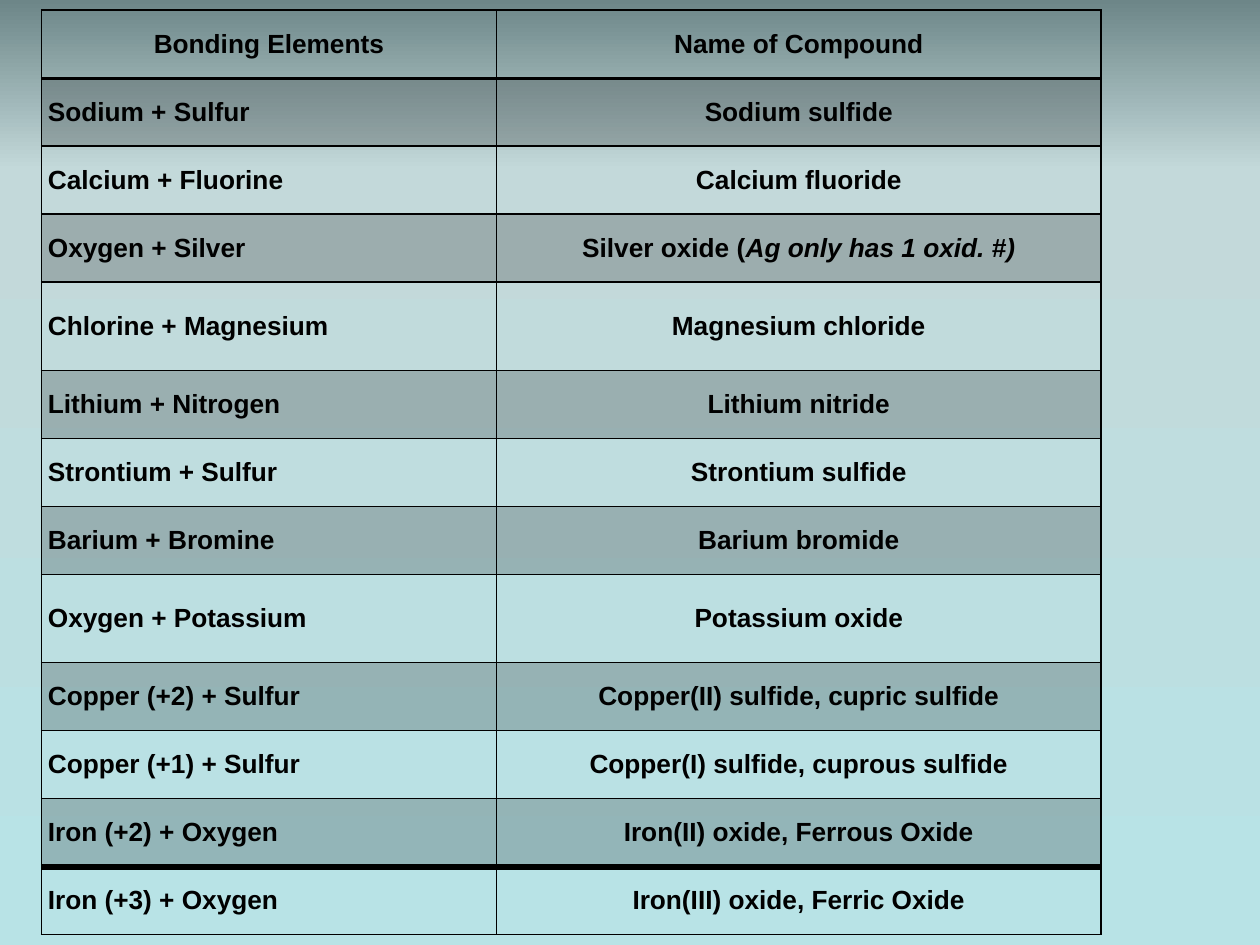
from copy import deepcopy
from dataclasses import dataclass

from pptx import Presentation
from pptx.dml.color import RGBColor as RGB
from pptx.enum.text import MSO_ANCHOR as Anchor, PP_ALIGN as Align
from pptx.oxml import parse_xml
from pptx.oxml.ns import nsdecls, qn
from pptx.util import Inches, Pt


@dataclass(frozen=True)
class Theme:
    font: str = "Arial"
    size: float = 15
    ink: str = "000000"
    shade: int = 20
    thin: float = 1
    head: float = 2
    heavy: float = 4
    back: tuple = ((0, "6D8688"), (0.18, "C3D9DA"), (1, "B8E3E6"))


ROWS = [
    ("Bonding Elements", "Name of Compound"),
    ("Sodium + Sulfur", "Sodium sulfide"),
    ("Calcium + Fluorine", "Calcium fluoride"),
    ("Oxygen + Silver", "Silver oxide (|Ag only has 1 oxid. #)"),
    ("Chlorine + Magnesium", "Magnesium chloride"),
    ("Lithium + Nitrogen", "Lithium nitride"),
    ("Strontium + Sulfur", "Strontium sulfide"),
    ("Barium + Bromine", "Barium bromide"),
    ("Oxygen + Potassium", "Potassium oxide"),
    ("Copper (+2) + Sulfur", "Copper(II) sulfide, cupric sulfide"),
    ("Copper (+1) + Sulfur", "Copper(I) sulfide, cuprous sulfide"),
    ("Iron (+2) + Oxygen", "Iron(II) oxide, Ferrous Oxide"),
    ("Iron (+3) + Oxygen", "Iron(III) oxide, Ferric Oxide"),
]
COLS = (3.61, 4.8)
TALL = {4, 8}


class Deck:
    def __init__(self, theme):
        self.theme = theme
        self.prs = Presentation()
        self.prs.slide_width, self.prs.slide_height = Inches(10), Inches(7.5)
        self.slide = self.prs.slides.add_slide(self.prs.slide_layouts[6])

    def backdrop(self):
        fill = self.slide.background.fill
        fill.gradient()
        fill.gradient_angle = 270
        stops = self.slide.element.find(".//" + qn("a:gsLst"))
        stops.append(deepcopy(stops[-1]))
        for stop, (place, color) in zip(fill.gradient_stops, self.theme.back):
            stop.position = place
            stop.color.rgb = RGB.from_string(color)

    def table(self, left, top, cols, heights, rows):
        grid = self.slide.shapes.add_table(
            len(rows), len(cols), Inches(left), Inches(top),
            Inches(sum(cols)), Inches(sum(heights))).table
        grid.first_row = grid.horz_banding = False
        for col, width in zip(grid.columns, cols):
            col.width = Inches(width)
        for row, height in zip(grid.rows, heights):
            row.height = Inches(height)

        # Rules above each row, plus the one below the last row
        rules = [self.theme.thin] * (len(rows) + 1)
        rules[1], rules[-2] = self.theme.head, self.theme.heavy
        for r, row in enumerate(rows):
            for c, text in enumerate(row):
                cell = grid.cell(r, c)
                self.edges(cell, rules[r], rules[r + 1])
                self.paint(cell, r % 2 == 1)
                self.label(cell, text, Align.LEFT if r and not c else Align.CENTER)

    def edges(self, cell, above, below):
        props = cell._tc.get_or_add_tcPr()
        thin = self.theme.thin
        for side, width in zip("LRTB", (thin, thin, above, below)):
            props.append(parse_xml(
                f'<a:ln{side} {nsdecls("a")} w="{Pt(width)}"><a:solidFill>'
                f'<a:srgbClr val="{self.theme.ink}"/></a:solidFill></a:ln{side}>'))

    def paint(self, cell, shaded):
        if not shaded:
            cell.fill.background()
            return
        cell.fill.solid()
        cell.fill.fore_color.rgb = RGB.from_string(self.theme.ink)
        color = cell._tc.tcPr.find(qn("a:solidFill"))[0]
        color.append(parse_xml(
            f'<a:alpha {nsdecls("a")} val="{self.theme.shade * 1000}"/>'))

    def label(self, cell, text, align):
        """Fill a cell; a bar in the text starts the italic part."""
        cell.margin_left = cell.margin_right = Inches(0.05)
        cell.margin_top = cell.margin_bottom = 0
        cell.vertical_anchor = Anchor.MIDDLE
        para = cell.text_frame.paragraphs[0]
        para.alignment = align
        for i, part in enumerate(text.split("|")):
            run = para.add_run()
            run.text = part
            font = run.font
            font.name, font.size = self.theme.font, Pt(self.theme.size)
            font.bold, font.italic = True, i > 0
            font.color.rgb = RGB.from_string(self.theme.ink)


def main():
    deck = Deck(Theme())
    deck.backdrop()
    heights = [0.7 if r in TALL else 0.54 for r in range(len(ROWS))]
    deck.table(0.33, 0.08, COLS, heights, ROWS)
    deck.prs.save("out.pptx")


if __name__ == "__main__":
    main()
